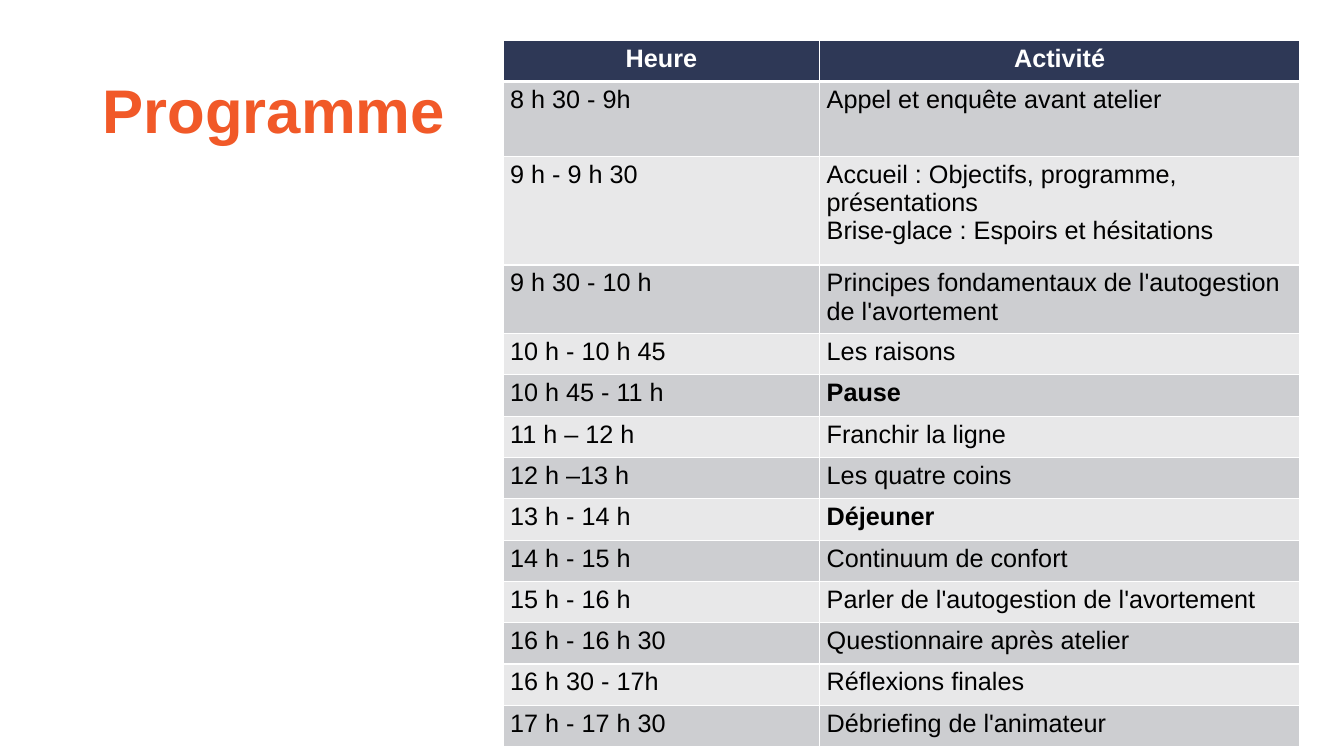
from typing import NamedTuple

import pptx
import pptx.dml.color
import pptx.enum.text
import pptx.oxml
import pptx.oxml.ns
import pptx.util

Inches = pptx.util.Inches
Pt = pptx.util.Pt
ALIGN = pptx.enum.text.PP_ALIGN
ANCHOR = pptx.enum.text.MSO_ANCHOR

COLORS = {
    "title": "F15928",
    "header": "2E3856",
    "dark_band": "CDCED1",
    "light_band": "E8E8E9",
    "text": "000000",
    "white": "FFFFFF",
}
FONT = "Arial"
COLUMN_WIDTHS = (3.14, 4.76)
ROW_HEIGHT = 0.41


class Session(NamedTuple):
    time: str
    activity: str
    height: float = ROW_HEIGHT
    is_break: bool = False


HEADER = Session("Heure", "Activité")
SESSIONS = (
    Session("8 h 30 - 9h", "Appel et enquête avant atelier", height=0.74),
    Session(
        "9 h - 9 h 30",
        "Accueil : Objectifs, programme, présentations\nBrise-glace : Espoirs et hésitations",
        height=1.08,
    ),
    Session("9 h 30 - 10 h", "Principes fondamentaux de l'autogestion de l'avortement", height=0.63),
    Session("10 h - 10 h 45", "Les raisons"),
    Session("10 h 45 - 11 h", "Pause", is_break=True),
    Session("11 h – 12 h", "Franchir la ligne"),
    Session("12 h –13 h", "Les quatre coins"),
    Session("13 h - 14 h", "Déjeuner", is_break=True),
    Session("14 h - 15 h", "Continuum de confort"),
    Session("15 h - 16 h", "Parler de l'autogestion de l'avortement"),
    Session("16 h - 16 h 30", "Questionnaire après atelier"),
    Session("16 h 30 - 17h", "Réflexions finales"),
    Session("17 h - 17 h 30", "Débriefing de l'animateur"),
)


def rgb(name: str) -> pptx.dml.color.RGBColor:
    return pptx.dml.color.RGBColor.from_string(COLORS[name])


def write_text(frame, text: str, *, size: float = 18, color: str = "text",
               bold: bool = False, align=ALIGN.LEFT, spacing: float = 1.0) -> None:
    frame.word_wrap = True
    for index, line in enumerate(text.split("\n")):
        para = frame.add_paragraph() if index else frame.paragraphs[0]
        para.alignment = align
        para.line_spacing = spacing
        span = para.add_run()
        span.text = line
        span.font.name = FONT
        span.font.size = Pt(size)
        span.font.bold = bold
        span.font.color.rgb = rgb(color)


def set_borders(cell, top: float, bottom: float) -> None:
    properties = cell._tc.get_or_add_tcPr()
    for side, width in (("L", 1), ("R", 1), ("T", top), ("B", bottom)):
        properties.append(pptx.oxml.parse_xml(
            f'<a:ln{side} {pptx.oxml.ns.nsdecls("a")} w="{Pt(width)}">'
            f'<a:solidFill><a:srgbClr val="{COLORS["white"]}"/></a:solidFill></a:ln{side}>'
        ))


def fill_row(table, index: int, session: Session) -> None:
    is_header = index == 0
    fill = "header" if is_header else ("light_band", "dark_band")[index % 2]
    table.rows[index].height = Inches(session.height)
    for column, text in enumerate((session.time, session.activity)):
        cell = table.cell(index, column)
        cell.margin_left = cell.margin_right = Inches(0.07)
        cell.margin_top = cell.margin_bottom = Inches(0.04)
        set_borders(cell, top=3 if index == 1 else 1, bottom=3 if is_header else 1)
        cell.fill.solid()
        cell.fill.fore_color.rgb = rgb(fill)
        write_text(
            cell.text_frame, text,
            color="white" if is_header else "text",
            bold=is_header or (session.is_break and column == 1),
            align=ALIGN.CENTER if is_header else ALIGN.LEFT,
        )


def add_title(page) -> None:
    box = page.shapes.add_textbox(Inches(0.92), Inches(0.4), Inches(8.77), Inches(1.45))
    box.text_frame.vertical_anchor = ANCHOR.MIDDLE
    write_text(box.text_frame, "Programme", size=44, color="title", bold=True, spacing=0.9)


def add_schedule(page) -> None:
    rows = (HEADER, *SESSIONS)
    table = page.shapes.add_table(
        len(rows), len(COLUMN_WIDTHS), Inches(4.99), Inches(0.4),
        Inches(sum(COLUMN_WIDTHS)), Inches(sum(row.height for row in rows)),
    ).table
    for column, width in zip(table.columns, COLUMN_WIDTHS):
        column.width = Inches(width)
    for index, session in enumerate(rows):
        fill_row(table, index, session)


def main() -> None:
    deck = pptx.Presentation()
    deck.slide_width = Inches(13.33)
    deck.slide_height = Inches(7.5)
    page = deck.slides.add_slide(deck.slide_layouts[6])
    add_title(page)
    add_schedule(page)
    deck.save("out.pptx")


if __name__ == "__main__":
    main()
